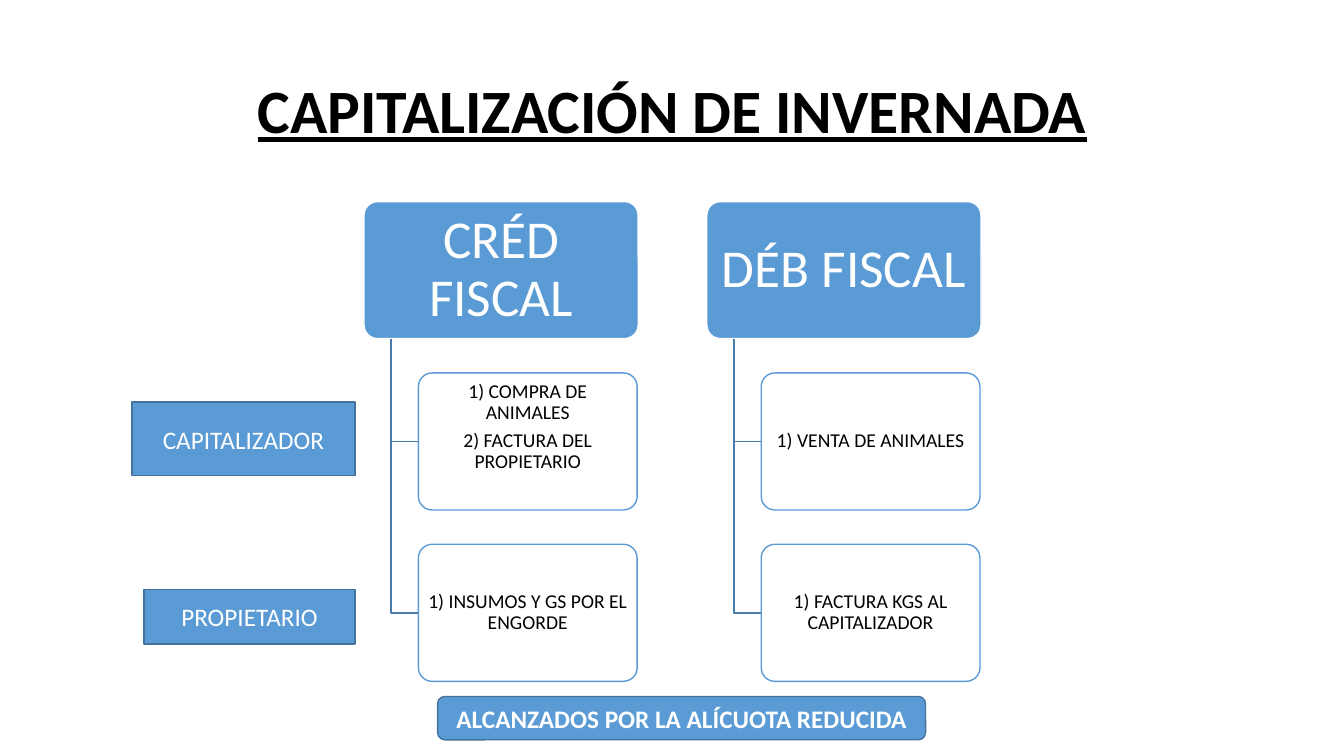
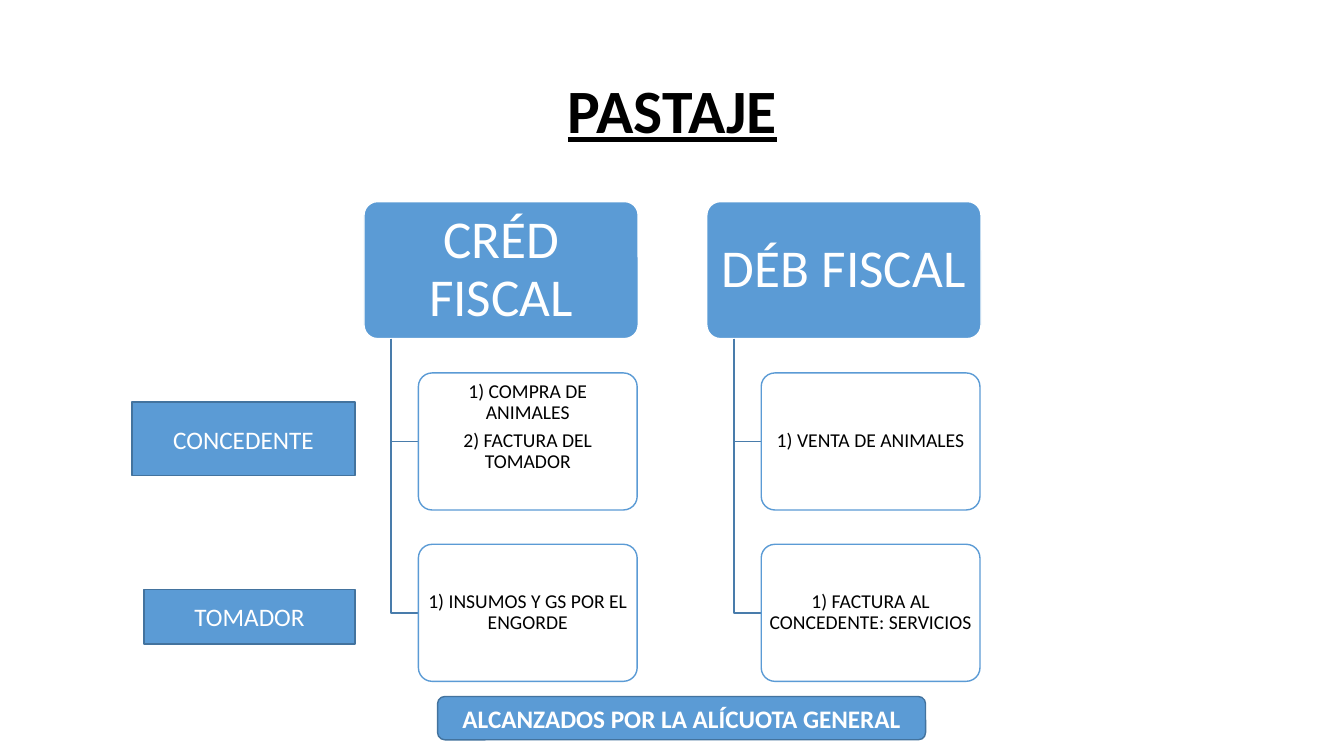
import pptx
import pptx.util
import pptx.dml.color
import pptx.enum.shapes
import pptx.enum.text

Inches = pptx.util.Inches
Pt = pptx.util.Pt
Kind = pptx.enum.shapes.MSO_SHAPE
BLUE, WHITE, BLACK, EDGE, LINK = "5B9BD5", "FFFFFF", "000000", "43739E", "497CAB"


def tint(code):
    return pptx.dml.color.RGBColor.from_string(code)


def assign(target, values):
    for name, value in values.items():
        setattr(target, name, value)


class Deck:
    """Holds the shared style and the slide being drawn."""

    title_font = {"size": Pt(44), "bold": True, "underline": True}
    head_font = {"size": Pt(38)}
    leaf_font = {"size": Pt(14)}
    label_font = {"size": Pt(18)}
    foot_font = {"size": Pt(18), "bold": True}
    tight = {"line_spacing": 0.9}

    def __init__(self):
        self.deck = pptx.Presentation()
        assign(self.deck, {"slide_width": Inches(13.33), "slide_height": Inches(7.5)})

    def start(self):
        self.slide = self.deck.slides.add_slide(self.deck.slide_layouts[6])

    def letter(self, shape, lines, font, color, layout=None, pad=(0.1, 0.05, 0.1, 0.05)):
        frame = shape.text_frame
        sides = ("margin_left", "margin_top", "margin_right", "margin_bottom")
        assign(frame, dict(zip(sides, map(Inches, pad))))
        assign(frame, {"word_wrap": True,
                       "vertical_anchor": pptx.enum.text.MSO_ANCHOR.MIDDLE,
                       "text": "\n".join(lines)})
        for para in frame.paragraphs:
            assign(para, {"alignment": pptx.enum.text.PP_ALIGN.CENTER, **(layout or {})})
            run = para.runs[0]
            assign(run.font, {"name": "Calibri", **font})
            run.font.color.rgb = tint(color)

    def title(self, text):
        box = self.slide.shapes.add_textbox(*map(Inches, (0.92, 0.4, 11.5, 1.45)))
        self.letter(box, [text], self.title_font, BLACK, self.tight)

    def box(self, kind, place, fill, edge, curve=None):
        shape = self.slide.shapes.add_shape(kind, *map(Inches, place))
        shape.shadow.inherit = False
        shape.fill.solid()
        shape.fill.fore_color.rgb = tint(fill)
        shape.line.color.rgb = tint(edge)
        shape.line.width = Pt(1)
        if curve is not None:
            shape.adjustments[0] = curve
        return shape

    def head(self, left, text):
        shape = self.box(Kind.ROUNDED_RECTANGLE, (left, 2, 2.72, 1.36), BLUE, WHITE, 0.1)
        self.letter(shape, [text], self.head_font, WHITE, self.tight, (0.08, 0.05, 0.08, 0.05))

    def leaf(self, left, top, lines):
        shape = self.box(Kind.ROUNDED_RECTANGLE, (left, top, 2.17, 1.36), WHITE, BLUE, 0.1)
        base = 0.3 if len(lines) > 1 else 0.02
        self.letter(shape, lines, self.leaf_font, BLACK,
                    {**self.tight, "space_after": Pt(4.9)}, (0.03, 0.02, 0.03, base))

    def link(self, left, top, right, base):
        pen = self.slide.shapes.build_freeform(Inches(left), Inches(top))
        pen.add_line_segments([(Inches(left), Inches(base)),
                               (Inches(right), Inches(base))], close=False)
        shape = pen.convert_to_shape()
        shape.shadow.inherit = False
        shape.fill.background()
        shape.line.color.rgb = tint(LINK)
        shape.line.width = Pt(1)

    def branch(self, left, text, leaves):
        self.head(left, text)
        for row, lines in enumerate(leaves):
            top = 3.7 + 1.7 * row
            self.link(left + 0.27, 3.36, left + 0.54, top + 0.68)
            self.leaf(left + 0.54, top, lines)

    def label(self, place, text):
        self.letter(self.box(Kind.RECTANGLE, place, BLUE, EDGE),
                    [text], self.label_font, WHITE)

    def foot(self, text):
        shape = self.box(Kind.ROUNDED_RECTANGLE, (4.34, 6.91, 4.84, 0.43), BLUE, EDGE)
        self.letter(shape, [text], self.foot_font, WHITE)


def main():
    show = Deck()
    pages = [
        ("CAPITALIZACIÓN DE INVERNADA", "CAPITALIZADOR", "PROPIETARIO",
         "1) FACTURA KGS AL CAPITALIZADOR", "REDUCIDA"),
        ("PASTAJE", "CONCEDENTE", "TOMADOR",
         "1) FACTURA AL CONCEDENTE: SERVICIOS", "GENERAL"),
    ]
    for title, owner, partner, bill, rate in pages:
        show.start()
        show.title(title)
        show.branch(3.61, "CRÉD FISCAL", [
            ["1) COMPRA DE ANIMALES", f"2) FACTURA DEL {partner}"],
            ["1) INSUMOS Y GS POR EL ENGORDE"]])
        show.branch(7.01, "DÉB FISCAL", [["1) VENTA DE ANIMALES"], [bill]])
        show.label((1.31, 3.99, 2.21, 0.73), owner)
        show.label((1.43, 5.85, 2.09, 0.54), partner)
        show.foot(f"ALCANZADOS POR LA ALÍCUOTA {rate}")
    show.deck.save("out.pptx")


if __name__ == "__main__":
    main()
